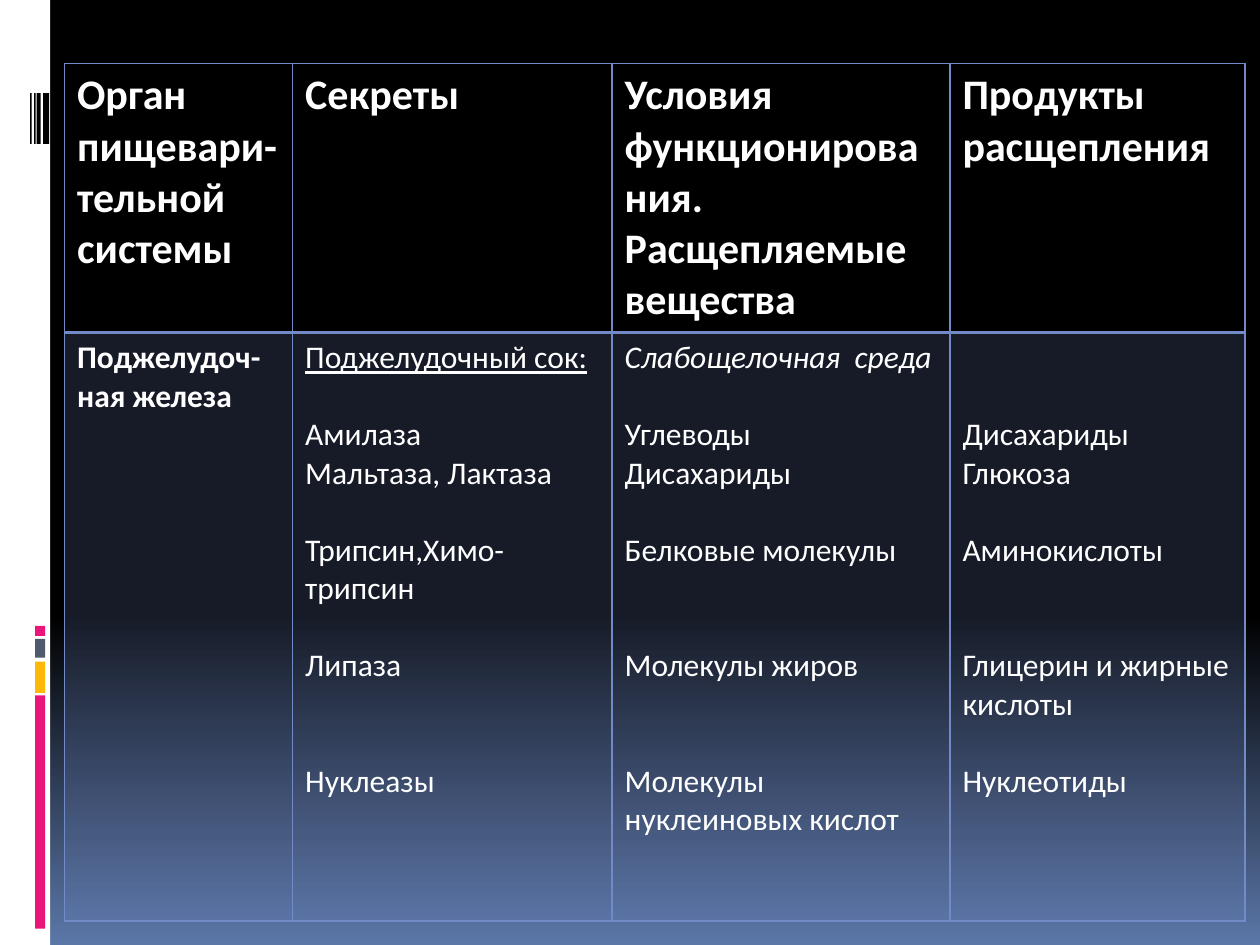
from copy import deepcopy
from dataclasses import dataclass

from lxml import etree
from pptx import Presentation
from pptx.dml.color import RGBColor
from pptx.enum.shapes import MSO_SHAPE
from pptx.oxml.ns import qn
from pptx.slide import Slide
from pptx.table import _Cell
from pptx.util import Cm, Pt

RECTANGLE = MSO_SHAPE.RECTANGLE
COLORS = {
    "black": "000000",
    "white": "FFFFFF",
    "pink": "EA157A",
    "amber": "FEB80A",
    "slate": "4E5B6F",
    "horizon": "5B77A8",
    "grid": "738AC8",
}
BODY_LINE = 22
CELL_TOP = Cm(0.13)


@dataclass
class Bar:
    left: float
    top: float
    width: float
    height: float
    color: str


@dataclass
class Line:
    text: str
    gap: int = 0
    size: int = 18
    bold: bool = False
    italic: bool = False
    underline: bool = False


BARS = [
    Bar(0, 0, 1.01, 19.05, "white"),
    Bar(0.71, 14.02, 0.2, 4.7, "pink"),
    Bar(0.71, 13.34, 0.2, 0.63, "amber"),
    Bar(0.71, 12.88, 0.2, 0.38, "slate"),
    Bar(0.71, 12.62, 0.2, 0.2, "pink"),
] + [
    Bar(left, 1.88, width, 1.02, "black")
    for left, width in [(0.87, 0.12), (0.74, 0.08), (0.69, 0.03), (0.61, 0.03)]
]

COLUMN_WIDTHS = [4.6, 6.44, 6.81, 5.95]
ROW_HEIGHTS = [5.41, 11.86]
HEADINGS = [
    ["Орган пищевари-", "тельной системы"],
    ["Секреты"],
    ["Условия функционирования. Расщепляемые вещества"],
    ["Продукты расщепления"],
]
ROWS = [
    [[Line(text, size=24, bold=True) for text in heading] for heading in HEADINGS],
    [
        [Line("Поджелудоч-ная железа", bold=True)],
        [
            Line("Поджелудочный сок:", underline=True),
            Line("Амилаза", 1),
            Line("Мальтаза, Лактаза"),
            Line("Трипсин,Химо-трипсин", 1),
            Line("Липаза", 1),
            Line("Нуклеазы", 2),
        ],
        [
            Line("Слабощелочная  среда", italic=True),
            Line("Углеводы", 1),
            Line("Дисахариды"),
            Line("Белковые молекулы", 1),
            Line("Молекулы жиров", 2),
            Line("Молекулы нуклеиновых кислот", 2),
        ],
        [
            Line("Дисахариды", 2),
            Line("Глюкоза"),
            Line("Аминокислоты", 1),
            Line("Глицерин и жирные кислоты", 2),
            Line("Нуклеотиды", 1),
        ],
    ],
]


def rgb(name: str) -> RGBColor:
    return RGBColor.from_string(COLORS[name])


def paint_background(page: Slide) -> None:
    fill = page.background.fill
    fill.gradient()
    fill.gradient_angle = 270
    stop_list = page.element.find(".//" + qn("a:gsLst"))
    stop_list.append(deepcopy(stop_list[-1]))
    settings = [(0, "black"), (0.65, "black"), (1, "horizon")]
    for stop, (position, color) in zip(fill.gradient_stops, settings):
        stop.position = position
        stop.color.rgb = rgb(color)


def draw_bar(page: Slide, bar: Bar) -> None:
    shape = page.shapes.add_shape(
        RECTANGLE, Cm(bar.left), Cm(bar.top), Cm(bar.width), Cm(bar.height)
    )
    shape.shadow.inherit = False
    shape.fill.solid()
    shape.fill.fore_color.rgb = rgb(bar.color)
    shape.line.fill.background()


def fill_text(cell: _Cell, lines: list[Line]) -> None:
    frame = cell.text_frame
    cell.margin_top = CELL_TOP + Pt(BODY_LINE * lines[0].gap)
    for index, line in enumerate(lines):
        para = frame.add_paragraph() if index else frame.paragraphs[0]
        para.text = line.text
        if index:
            para.space_before = Pt(BODY_LINE * line.gap)
        font = para.font
        font.name = "Calibri"
        font.size = Pt(line.size)
        font.bold = line.bold
        font.italic = line.italic
        font.underline = line.underline
        font.color.rgb = rgb("white")


def style_cell(cell: _Cell, is_header: bool, divider_side: str) -> None:
    properties = cell._tc.get_or_add_tcPr()
    if is_header:
        cell.fill.background()
    else:
        cell.fill.solid()
        cell.fill.fore_color.rgb = rgb("grid")
        tint = properties.find(".//" + qn("a:srgbClr"))
        etree.SubElement(tint, qn("a:alpha"), val="20000")
    for index, side in enumerate(["lnL", "lnR", "lnT", "lnB"]):
        width = Pt(2 if side == divider_side else 1)
        border = etree.Element(qn("a:" + side), w=str(width))
        paint = etree.SubElement(border, qn("a:solidFill"))
        etree.SubElement(paint, qn("a:srgbClr"), val=COLORS["grid"])
        properties.insert(index, border)


def draw_table(page: Slide) -> None:
    table = page.shapes.add_table(
        len(ROWS), len(COLUMN_WIDTHS), Cm(1.3), Cm(1.28),
        Cm(sum(COLUMN_WIDTHS)), Cm(sum(ROW_HEIGHTS)),
    ).table
    table.horz_banding = False
    for column, width in zip(table.columns, COLUMN_WIDTHS):
        column.width = Cm(width)
    for row, height in zip(table.rows, ROW_HEIGHTS):
        row.height = Cm(height)
    for row_index, row in enumerate(ROWS):
        is_header = row_index == 0
        for column_index, lines in enumerate(row):
            cell = table.cell(row_index, column_index)
            fill_text(cell, lines)
            style_cell(cell, is_header, "lnB" if is_header else "lnT")


def main() -> None:
    deck = Presentation()
    deck.slide_width, deck.slide_height = Cm(25.4), Cm(19.05)
    page = deck.slides.add_slide(deck.slide_layouts[6])
    paint_background(page)
    for bar in BARS:
        draw_bar(page, bar)
    draw_table(page)
    deck.save("out.pptx")


if __name__ == "__main__":
    main()
